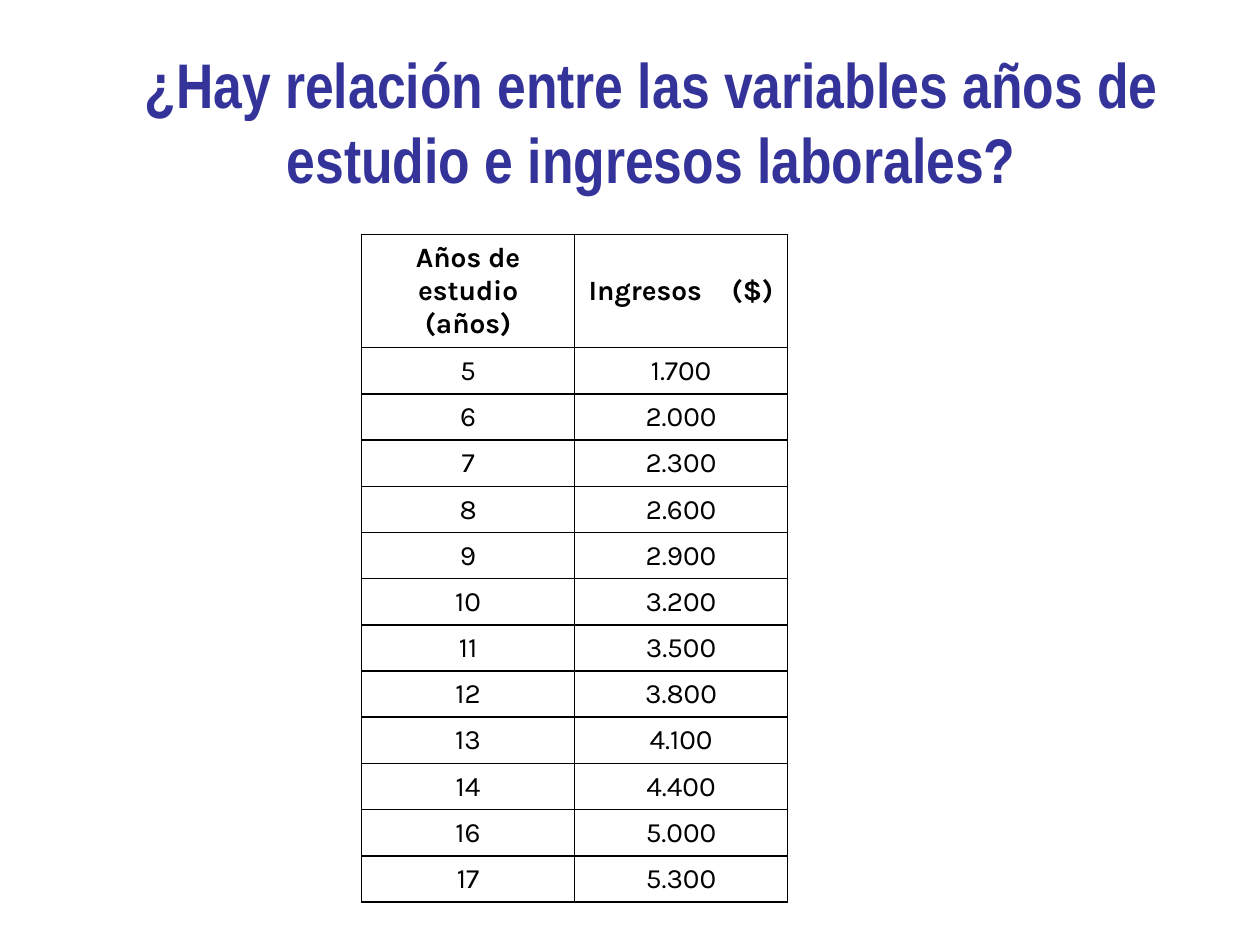
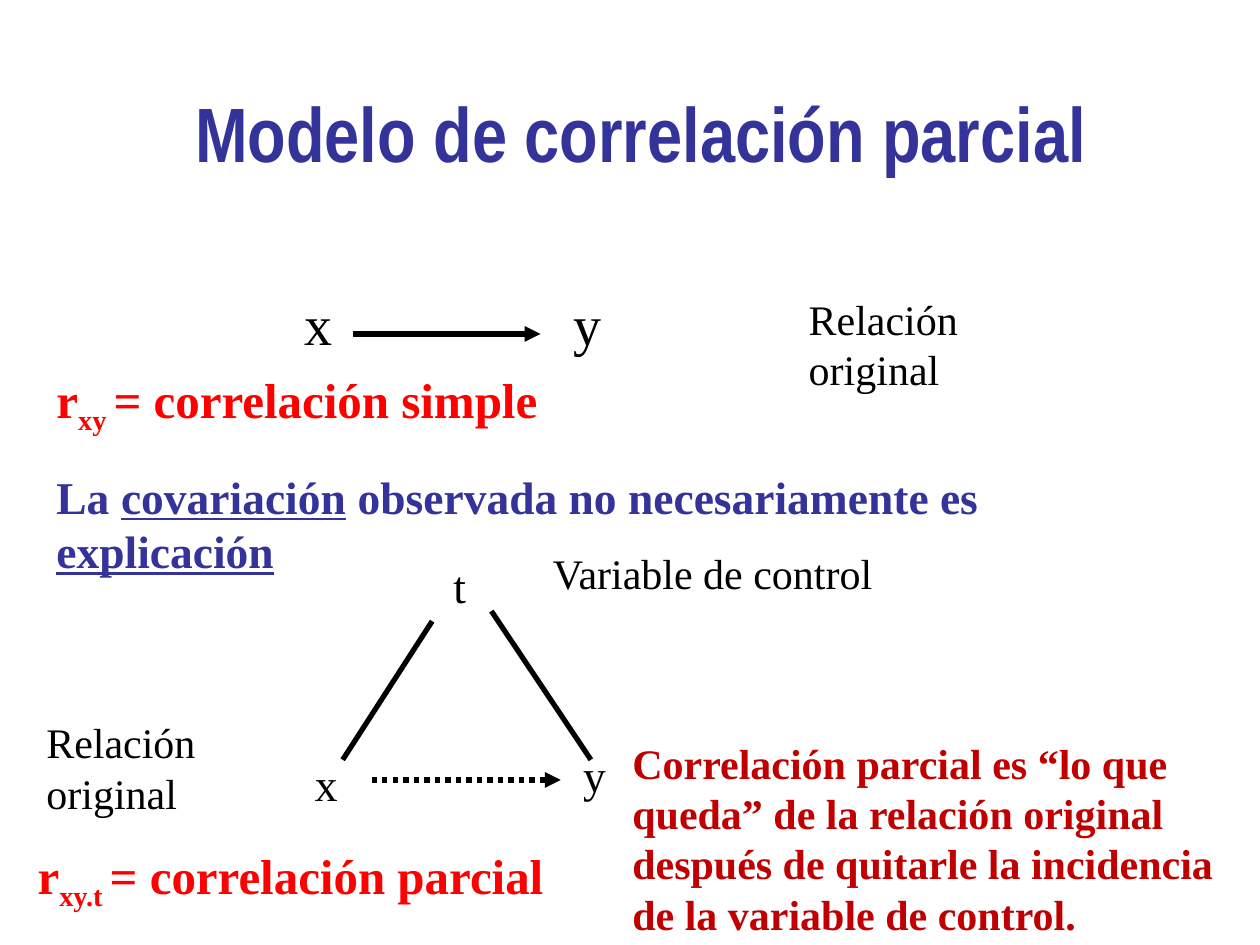
from pptx import Presentation, util as u
from pptx.dml.color import RGBColor
from pptx.enum import dml, shapes, text
from pptx.oxml.ns import qn
from lxml import etree

EMU_PER_PX = 9144
COLORS = {"title": "333399", "ink": "000000", "formula": "FF0000", "conclusion": "C00000"}
TITLE_FONT, TABLE_FONT, BODY_FONT = "Arial Narrow", "Karla", "Times New Roman"
TITLE_ONLY = 5

INCOME_BY_YEARS = [
    ("5", "1.700"), ("6", "2.000"), ("7", "2.300"), ("8", "2.600"),
    ("9", "2.900"), ("10", "3.200"), ("11", "3.500"), ("12", "3.800"),
    ("13", "4.100"), ("14", "4.400"), ("16", "5.000"), ("17", "5.300"),
]


def px(length):
    return u.Emu(length * EMU_PER_PX)


def rgb(name):
    return RGBColor.from_string(COLORS[name])


def style_font(font, name, size, color="ink", bold=False):
    font.name, font.size, font.bold = name, u.Pt(size), bold
    font.color.rgb = rgb(color)


def add_titled_slide(prs, title, left, top, size):
    slide = prs.slides.add_slide(prs.slide_layouts[TITLE_ONLY])
    heading = slide.shapes.title
    heading.left, heading.top, heading.width, heading.height = map(px, (left, top, 884, 125))
    frame = heading.text_frame
    frame.text = title
    frame.word_wrap = True
    frame.auto_size = text.MSO_AUTO_SIZE.NONE
    frame.vertical_anchor = text.MSO_ANCHOR.BOTTOM
    paragraph = frame.paragraphs[0]
    paragraph.alignment = text.PP_ALIGN.CENTER
    style_font(paragraph.font, TITLE_FONT, size, "title", True)
    return slide


def add_label(slide, box, words, size, color="ink", bold=False, wrap=False):
    label = slide.shapes.add_textbox(*map(px, box))
    frame = label.text_frame
    frame.word_wrap = wrap
    frame.auto_size = text.MSO_AUTO_SIZE.SHAPE_TO_FIT_TEXT
    paragraph = frame.paragraphs[0]
    style_font(paragraph.font, BODY_FONT, size, color, bold)
    for part in [words] if isinstance(words, str) else words:
        paragraph.add_run().text = part
    return paragraph


def add_formula(slide, box, subscript, meaning):
    formula = add_label(slide, box, ["r", subscript + " ", "= " + meaning], 28, "formula", True)
    formula.runs[1]._r.get_or_add_rPr().set("baseline", "-25000")


def add_link(slide, start, end, arrow=False, dotted=False):
    link = slide.shapes.add_connector(shapes.MSO_CONNECTOR.STRAIGHT, *map(px, start + end))
    link.line.color.rgb = rgb("ink")
    link.line.width = u.Pt(3)
    if dotted:
        link.line.dash_style = dml.MSO_LINE.ROUND_DOT
    if arrow:
        etree.SubElement(link.line._get_or_add_ln(), qn("a:tailEnd"), type="triangle")
    etree.SubElement(link._element.spPr, qn("a:effectLst"))


def add_borders(cell):
    properties = cell._tc.get_or_add_tcPr()
    for position, side in enumerate(("a:lnL", "a:lnR", "a:lnT", "a:lnB")):
        border = etree.Element(qn(side), w=str(u.Pt(1)))
        fill = etree.SubElement(border, qn("a:solidFill"))
        etree.SubElement(fill, qn("a:srgbClr"), val=COLORS["ink"])
        properties.insert(position, border)


def fill_cell(cell, words, header):
    cell.fill.background()
    add_borders(cell)
    cell.margin_left = cell.margin_right = px(10)
    cell.margin_top = cell.margin_bottom = px(5)
    cell.vertical_anchor = text.MSO_ANCHOR.MIDDLE if header else text.MSO_ANCHOR.BOTTOM
    paragraph = cell.text_frame.paragraphs[0]
    paragraph.alignment = text.PP_ALIGN.CENTER
    style_font(paragraph.font, TABLE_FONT, 16, bold=header)
    for part in words if isinstance(words, list) else [words]:
        paragraph.add_run().text = part
    return paragraph


def add_income_table(slide):
    header_height, body_height = 90, 440
    frame = slide.shapes.add_table(len(INCOME_BY_YEARS) + 1, 2,
                                   *map(px, (287, 186, 338, header_height + body_height)))
    incomes = frame.table
    incomes.first_row = incomes.horz_banding = False
    for column in incomes.columns:
        column.width = px(169)
    for row in incomes.rows:
        row.height = px(body_height) // len(INCOME_BY_YEARS)
    incomes.rows[0].height = px(header_height)

    fill_cell(incomes.cell(0, 0), "Años de estudio (años)", True)
    income_header = fill_cell(incomes.cell(0, 1), ["Ingresos", " ", "($)"], True)
    income_header.runs[1]._r.get_or_add_rPr().set("spc", "1300")
    for row, values in enumerate(INCOME_BY_YEARS, 1):
        for column, value in enumerate(values):
            fill_cell(incomes.cell(row, column), value, False)


def add_simple_model(slide):
    add_label(slide, (232, 225, 42, 63), "x", 32)
    add_label(slide, (445, 225, 37, 63), "y", 32, wrap=True)
    add_link(slide, (280, 265), (429, 265), arrow=True)
    add_label(slide, (632, 228, 250, 50), "Relación original", 24)
    add_formula(slide, (35, 288, 414, 57), "xy", "correlación simple")
    warning = add_label(slide, (35, 367, 920, 53),
                        ["La ", "covariación", " observada no necesariamente es ", "explicación"],
                        26, "title", True, wrap=True)
    for term in warning.runs[1::2]:
        term.font.underline = True


def add_partial_model(slide):
    for variable, left, top, width in (("x", 240, 595, 38), ("t", 350, 438, 30), ("y", 453, 588, 38)):
        add_label(slide, (left, top, width, 53), variable, 26)
    add_link(slide, (390, 485), (469, 603))
    add_link(slide, (343, 493), (272, 603))
    add_link(slide, (295, 619), (445, 619), arrow=True, dotted=True)
    add_label(slide, (27, 564, 193, 90), "Relación original", 24, wrap=True)
    add_label(slide, (429, 430, 277, 50), "Variable de control", 24)
    add_formula(slide, (20, 666, 431, 57), "xy.t", "correlación parcial")
    add_label(slide, (492, 580, 508, 172),
              "Correlación parcial es “lo que queda” de la relación original después "
              "de quitarle la incidencia de la variable de control.",
              24, "conclusion", True, wrap=True)


def main():
    prs = Presentation()
    prs.slide_width, prs.slide_height = px(1000), px(750)
    question = add_titled_slide(
        prs, "¿Hay relación entre las variables años de estudio e ingresos laborales?", 75, 36, 36)
    add_income_table(question)
    model = add_titled_slide(prs, "Modelo de correlación parcial", 67, 21, 44)
    add_simple_model(model)
    add_partial_model(model)
    prs.save("out.pptx")


if __name__ == "__main__":
    main()
